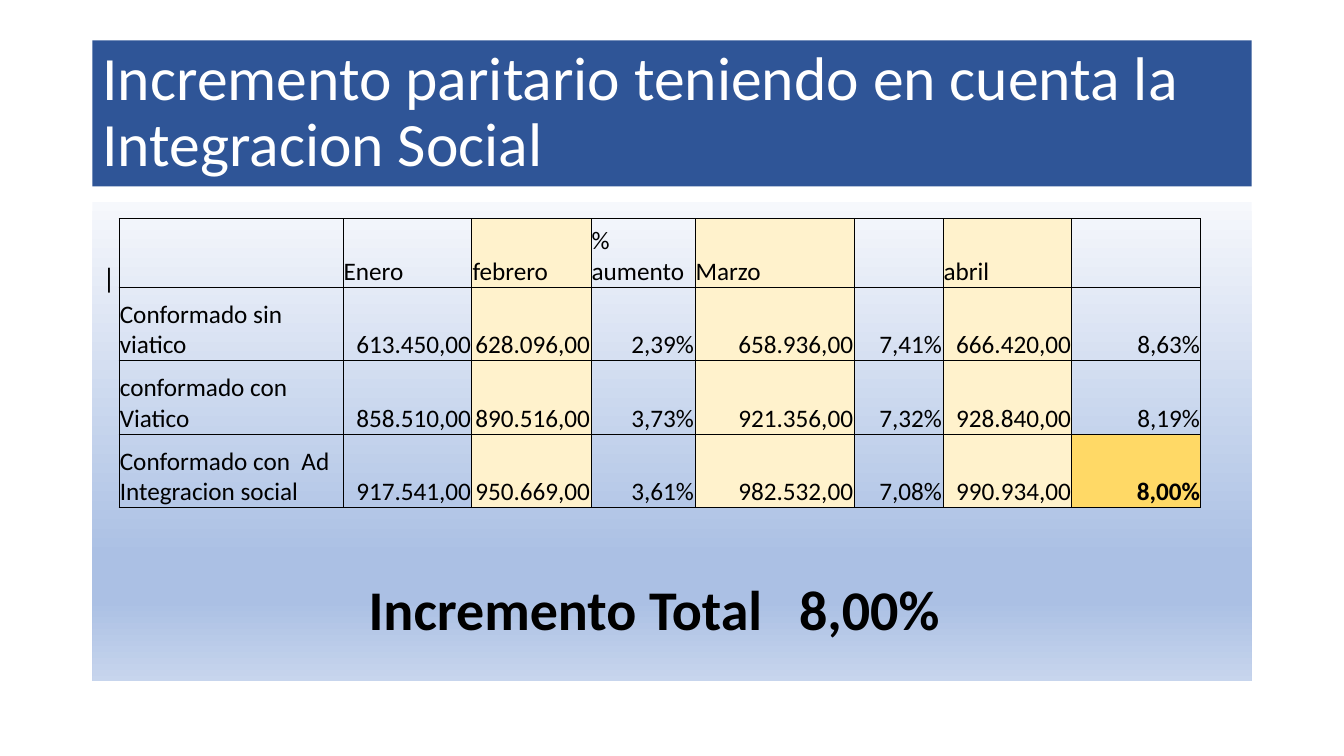
from lxml import etree
from pptx import Presentation
from pptx import util as u
from pptx.dml import color
from pptx.enum import text
from pptx.oxml import ns

BLACK, WHITE, BLUE = "000000", "FFFFFF", "2F5597"
CREAM, GOLD = "FFF2CC", "FFD966"
GRADIENT = [(0, "F6F8FC"), (74, "ABC0E4"), (83, "ABC0E4"), (100, "C7D5ED")]
COLUMN_WIDTHS = [5.64, 3.25, 3, 2.62, 4.01, 2.24, 3.25, 3.25]
ROW_HEIGHTS = [1.73, 1.85, 1.85, 1.85]
CREAM_COLUMNS = (2, 4, 6)
ROWS = [
    ["", "Enero", "febrero", "% aumento", "Marzo", "", "abril", ""],
    ["Conformado sin viatico", "613.450,00", "628.096,00", "2,39%",
     "658.936,00", "7,41%", "666.420,00", "8,63%"],
    ["conformado con  Viatico", "858.510,00", "890.516,00", "3,73%",
     "921.356,00", "7,32%", "928.840,00", "8,19%"],
    ["Conformado con  Ad Integracion social", "917.541,00", "950.669,00", "3,61%",
     "982.532,00", "7,08%", "990.934,00", "8,00%"],
]


def rgb(hex_value):
    """Turn a hex string into a colour."""
    return color.RGBColor.from_string(hex_value)


def apply_format(target, values):
    """Set each attribute of the target from a dict."""
    for name, value in values.items():
        setattr(target, name, value)


def add_element(parent, tag, **attributes):
    """Append a drawing element to its parent."""
    return etree.SubElement(parent, ns.qn(tag), attributes)


def set_solid(fill, hex_value):
    """Give a fill one colour."""
    fill.solid()
    fill.fore_color.rgb = rgb(hex_value)


def set_gradient(shape, stops):
    """Fill a shape with a gradient from top to bottom."""
    shape.fill.gradient()
    shape.fill.gradient_angle = 270
    stop_list = shape.fill._xPr.find(".//" + ns.qn("a:gsLst"))
    for old_stop in list(stop_list):
        stop_list.remove(old_stop)
    for percent, hex_value in stops:
        stop = add_element(stop_list, "a:gs", pos=str(percent * 1000))
        add_element(stop, "a:srgbClr", val=hex_value)


def place(shape, left, top, width, height):
    """Move and size a shape in centimetres."""
    sides = dict(left=left, top=top, width=width, height=height)
    apply_format(shape, {name: u.Cm(value) for name, value in sides.items()})


def write(paragraph, words, size, hex_value=BLACK, bold=False, **layout):
    """Write formatted words in a paragraph."""
    paragraph.text = words
    apply_format(paragraph, layout)
    apply_format(paragraph.font, dict(name="Calibri", size=u.Pt(size), bold=bold))
    paragraph.font.color.rgb = rgb(hex_value)


def fill_title(title):
    """Format the title band."""
    place(title, 2.33, 1.02, 29.21, 3.68)
    set_solid(title.fill, BLUE)
    apply_format(title.text_frame, dict(
        auto_size=text.MSO_AUTO_SIZE.NONE, vertical_anchor=text.MSO_ANCHOR.MIDDLE))
    write(title.text_frame.paragraphs[0],
          "Incremento paritario teniendo en cuenta la Integracion Social",
          44, WHITE, alignment=text.PP_ALIGN.LEFT, line_spacing=0.9)


def fill_body(body):
    """Format the gradient panel and its mark."""
    place(body, 2.33, 5.08, 29.21, 12.09)
    set_gradient(body, GRADIENT)
    apply_format(body.text_frame, dict(
        auto_size=text.MSO_AUTO_SIZE.NONE, margin_top=u.Cm(1.57),
        vertical_anchor=text.MSO_ANCHOR.TOP))
    paragraph = body.text_frame.paragraphs[0]
    properties = paragraph._p.get_or_add_pPr()
    apply_format_xml = {"marL": "0", "indent": "0"}
    properties.attrib.update(apply_format_xml)
    add_element(properties, "a:buNone")
    write(paragraph, "|", 20, line_spacing=0.9, space_before=u.Pt(0))


def add_total(slide):
    """Add the total line, with its figure on a tab stop."""
    box = slide.shapes.add_textbox(u.Cm(9.04), u.Cm(14.35), u.Cm(15.77), u.Cm(1.96))
    apply_format(box.text_frame, dict(
        word_wrap=True, auto_size=text.MSO_AUTO_SIZE.SHAPE_TO_FIT_TEXT))
    paragraph = box.text_frame.paragraphs[0]
    tabs = add_element(paragraph._p.get_or_add_pPr(), "a:tabLst")
    add_element(tabs, "a:tab", pos=str(u.Cm(10.85)), algn="l")
    write(paragraph, "Incremento Total\t8,00%", 40, bold=True)


def add_borders(cell):
    """Draw a thin black line on each side of a cell."""
    properties = cell._tc.get_or_add_tcPr()
    for side in "LRTB":
        line = add_element(properties, f"a:ln{side}", w=str(u.Pt(0.5)))
        add_element(add_element(line, "a:solidFill"), "a:srgbClr", val=BLACK)


def fill_cell(cell, words, row, column):
    """Write and format one table cell."""
    is_total = row == len(ROWS) - 1 and column == len(COLUMN_WIDTHS) - 1
    is_number = row > 0 and column > 0
    add_borders(cell)
    if is_total or column in CREAM_COLUMNS:
        set_solid(cell.fill, GOLD if is_total else CREAM)
    else:
        cell.fill.background()
    apply_format(cell, dict(
        margin_left=u.Cm(0.02), margin_right=u.Cm(0.02), margin_top=u.Cm(0.02),
        margin_bottom=0, vertical_anchor=text.MSO_ANCHOR.BOTTOM))
    write(cell.text_frame.paragraphs[0], words, 18, bold=is_total,
          alignment=text.PP_ALIGN.RIGHT if is_number else text.PP_ALIGN.LEFT)


def add_salary_table(slide):
    """Add the table of salaries by month."""
    table = slide.shapes.add_table(
        len(ROWS), len(COLUMN_WIDTHS), u.Cm(3), u.Cm(5.51),
        u.Cm(sum(COLUMN_WIDTHS)), u.Cm(sum(ROW_HEIGHTS))).table
    apply_format(table, dict(first_row=False, horz_banding=False))
    for column, width in zip(table.columns, COLUMN_WIDTHS):
        column.width = u.Cm(width)
    for row, height in zip(table.rows, ROW_HEIGHTS):
        row.height = u.Cm(height)
    for row, values in enumerate(ROWS):
        for column, words in enumerate(values):
            fill_cell(table.cell(row, column), words, row, column)


def main():
    """Build and save the slide."""
    presentation = Presentation()
    apply_format(presentation, dict(slide_width=u.Cm(33.87), slide_height=u.Cm(19.05)))
    slide = presentation.slides.add_slide(presentation.slide_layouts[1])
    fill_title(slide.shapes.title)
    fill_body(slide.placeholders[1])
    add_total(slide)
    add_salary_table(slide)
    presentation.save("out.pptx")


if __name__ == "__main__":
    main()
